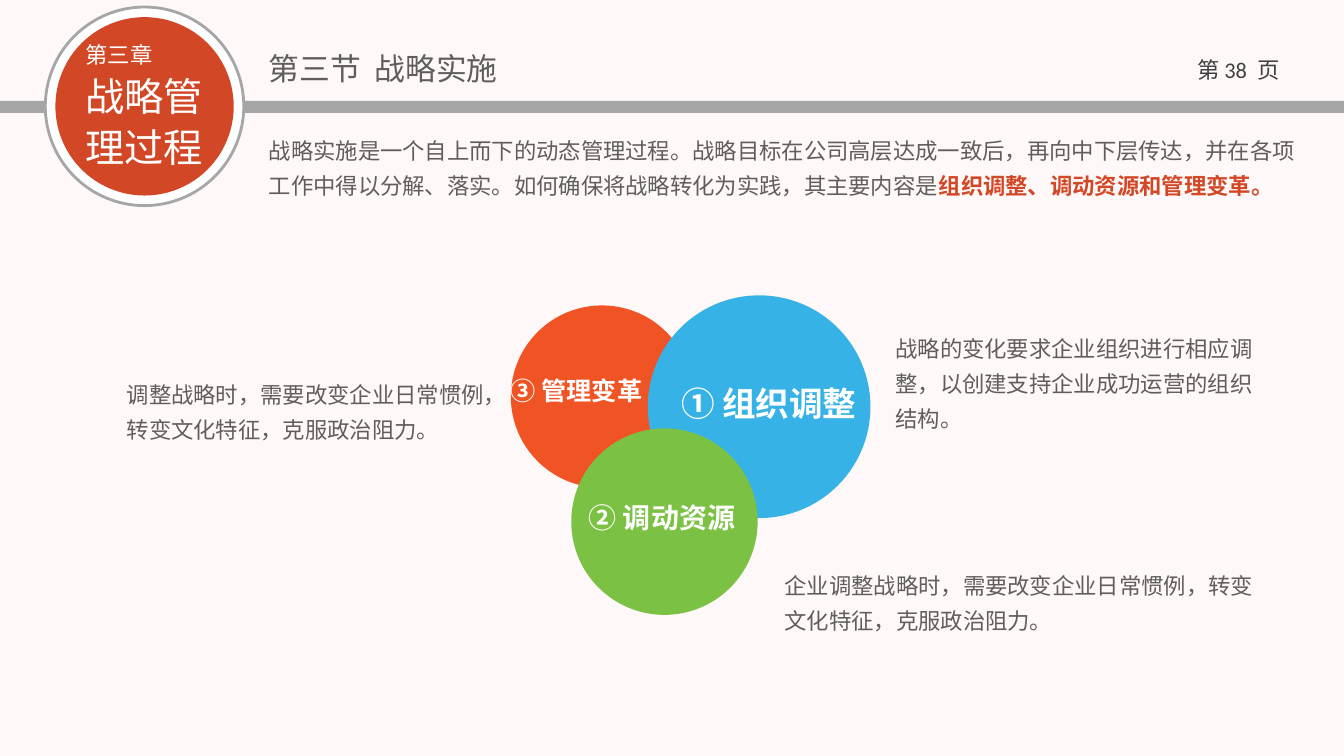
from pptx import Presentation
from pptx import util as u
from pptx.dml import color
from pptx.enum import shapes, text
from pptx.oxml import ns
from lxml import etree

COLORS = {
    "background": "FFF8F8", "bar": "A6A6A6", "white": "FFFFFF", "badge": "D24726",
    "body": "5F5E5C", "page": "404040",
    "orange": "F05425", "blue": "36B2E6", "green": "7BC143",
}
CJK = "Noto Sans CJK SC"
LATIN = "Calibri"
LEFT, CENTER, RIGHT = text.PP_ALIGN.LEFT, text.PP_ALIGN.CENTER, text.PP_ALIGN.RIGHT


def rgb(name):
    return color.RGBColor.from_string(COLORS[name])


def add_filled(slide, kind, box, fill, line=None):
    shape = slide.shapes.add_shape(kind, *map(u.Inches, box))
    shape.shadow.inherit = False
    shape.fill.solid()
    shape.fill.fore_color.rgb = rgb(fill)
    if line:
        shape.line.color.rgb = rgb(line)
        shape.line.width = u.Pt(2)
    else:
        shape.line.fill.background()
    return shape


def add_circle(slide, left, top, diameter, fill, line=None):
    return add_filled(slide, shapes.MSO_SHAPE.OVAL, (left, top, diameter, diameter), fill, line)


def add_run(paragraph, content, size, fill, bold=False, font=CJK):
    run = paragraph.add_run()
    run.text = content
    run.font.size = u.Pt(size)
    run.font.bold = bold
    run.font.name = font
    run.font.color.rgb = rgb(fill)
    east_asian = etree.SubElement(run._r.get_or_add_rPr(), ns.qn("a:ea"))
    east_asian.set("typeface", CJK)


def add_text(slide, box, paragraphs, size=16, fill="body", bold=False, align=LEFT,
             spacing=1.0, before=0, after=0):
    frame = slide.shapes.add_textbox(*map(u.Inches, box)).text_frame
    frame.word_wrap = True
    for index, runs in enumerate(paragraphs):
        paragraph = frame.add_paragraph() if index else frame.paragraphs[0]
        paragraph.alignment = align
        paragraph.line_spacing = spacing
        paragraph.space_before = u.Pt(0 if index else before)
        paragraph.space_after = u.Pt(after)
        for content, changes in runs:
            add_run(paragraph, content, **{"size": size, "fill": fill, "bold": bold, **changes})


def add_header(slide, left, top, width):
    add_filled(slide, shapes.MSO_SHAPE.RECTANGLE, (left, top + 1, width, 0.12), "bar")
    add_text(slide, (left + 11.69, top + 0.51, 1.2, 0.4),
             [[("第 ", {}), ("38  ", {"font": LATIN}), ("页", {})]], fill="page", align=CENTER)
    add_text(slide, (left + 2.57, top + 0.44, 3.54, 0.47), [[("第三节  战略实施", {})]], size=22)


def add_chapter_badge(slide, left, top, diameter):
    ring = 0.1
    add_circle(slide, left, top, diameter, "white", "bar")
    add_circle(slide, left + ring, top + ring, diameter - 2 * ring, "badge")
    add_text(slide, (left + 0.3, top + 0.29, 1.73, 1.4),
             [[("第三章", {"size": 16})], [("战略管", {})], [("理过程", {})]],
             size=28, fill="white", before=4, after=3)


def add_introduction(slide, left, top, width, height):
    add_text(slide, (left, top, width, height), [[
        ("战略实施是一个自上而下的动态管理过程。战略目标在公司高层达成一致后，再向中下层传达，"
         "并在各项工作中得以分解、落实。如何确保将战略转化为实践，其主要内容是", {}),
        ("组织调整、调动资源和管理变革。", {"fill": "badge", "bold": True}),
    ]], spacing=1.3, after=6)


def add_overlapping_circles(slide, left, top):
    circles = [(0.1, 0.1, 1.81, "orange"), (1.46, 0, 2.21, "blue"), (0.7, 1.32, 1.85, "green")]
    labels = [
        ("② 调动资源", 0.7, 1.99, 1.8, 0.44, 20, CENTER),
        ("③ 管理变革", 0, 0.74, 1.64, 0.4, 18, LEFT),
        ("① 组织调整", 1.42, 0.82, 2.21, 0.51, 24, RIGHT),
    ]
    for x, y, diameter, fill in circles:
        add_circle(slide, left + x, top + y, diameter, fill)
    for label, x, y, width, height, size, align in labels:
        add_text(slide, (left + x, top + y, width, height), [[(label, {})]],
                 size=size, fill="white", bold=True, align=align)


def add_explanations(slide, left, top):
    explanations = [
        ("企业调整战略时，需要改变企业日常惯例，转变文化特征，克服政治阻力。", 6.53, 2.35, 4.86, 0.8),
        ("调整战略时，需要改变企业日常惯例，转变文化特征，克服政治阻力。", 0, 0.45, 3.81, 0.8),
        ("战略的变化要求企业组织进行相应调整，以创建支持企业成功运营的组织结构。", 7.63, 0, 3.77, 1.15),
    ]
    for content, x, y, width, height in explanations:
        add_text(slide, (left + x, top + y, width, height), [[(content, {})]], spacing=1.3)


def main():
    presentation = Presentation()
    presentation.slide_width = u.Inches(13.34)
    presentation.slide_height = u.Inches(7.5)
    slide = presentation.slides.add_slide(presentation.slide_layouts[6])
    slide.background.fill.solid()
    slide.background.fill.fore_color.rgb = rgb("background")
    add_header(slide, 0, 0, 13.34)
    add_chapter_badge(slide, 0.45, 0.07, 1.97)
    add_introduction(slide, 2.57, 1.23, 10.5, 0.77)
    add_overlapping_circles(slide, 4.97, 2.93)
    add_explanations(slide, 1.16, 3.2)
    presentation.save("out.pptx")


if __name__ == "__main__":
    main()
